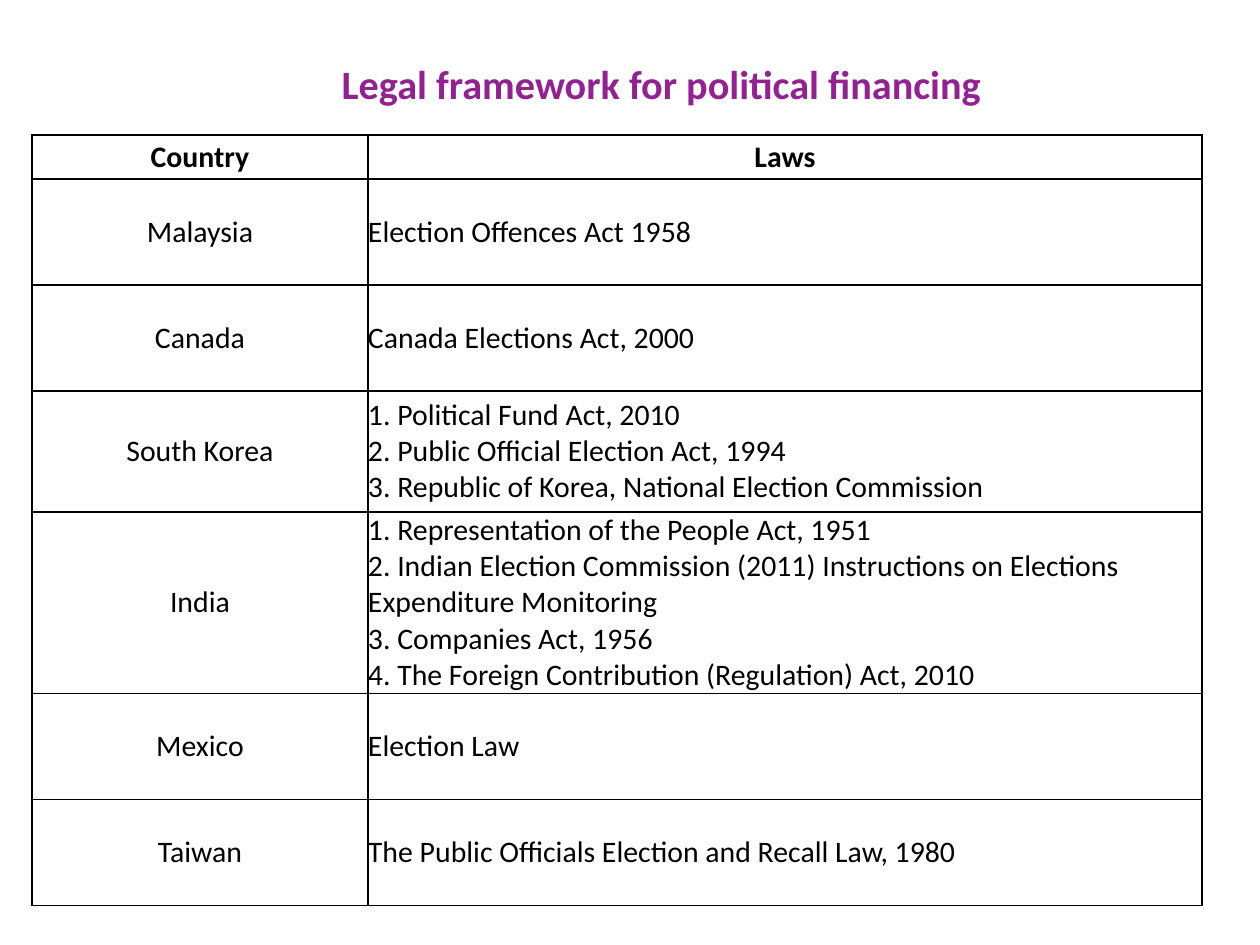
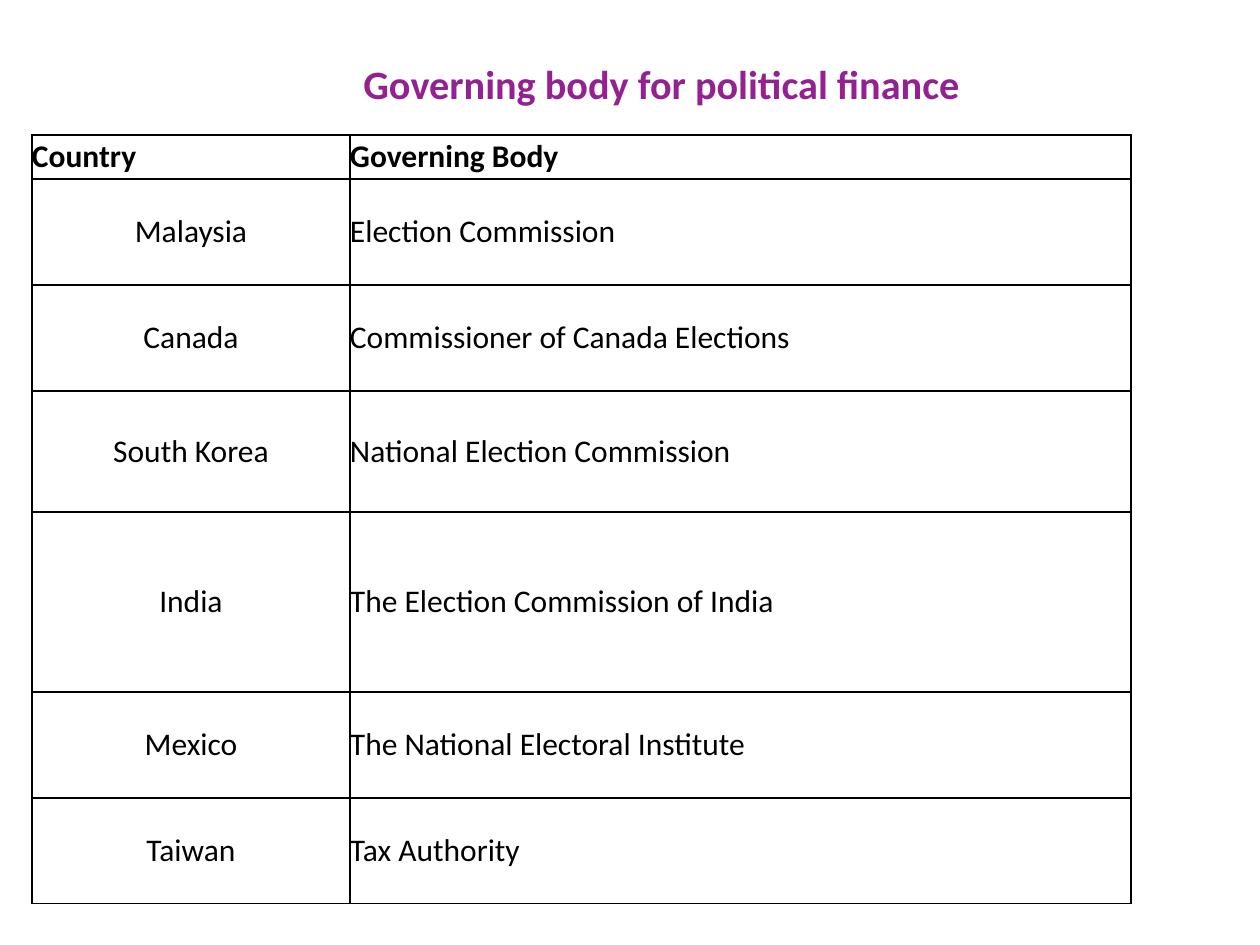
import copy

import pptx
import pptx.dml.color
import pptx.enum.text
import pptx.oxml
import pptx.oxml.ns
import pptx.util

PX = 914400 / 126
FONT = "Calibri"
PURPLE = pptx.dml.color.RGBColor(0x94, 0x21, 0x92)
BLACK = pptx.dml.color.RGBColor(0, 0, 0)
CENTER = pptx.enum.text.PP_ALIGN.CENTER
LEFT = pptx.enum.text.PP_ALIGN.LEFT
MIDDLE = pptx.enum.text.MSO_ANCHOR.MIDDLE

TITLE_ONLY_LAYOUT = 5
ROW_HEIGHTS = [44, 106, 106, 121, 180, 106, 106]
COUNTRIES = ["Malaysia", "Canada", "South Korea", "India", "Mexico", "Taiwan"]
LAWS = [
    "Election Offences Act 1958",
    "Canada Elections Act, 2000",
    "1. Political Fund Act, 2010\n"
    "2. Public Official Election Act, 1994\n"
    "3. Republic of Korea, National Election Commission",
    "1. Representation of the People Act, 1951\n"
    "2. Indian Election Commission (2011) Instructions on Elections Expenditure Monitoring\n"
    "3. Companies Act, 1956\n"
    "4. The Foreign Contribution (Regulation) Act, 2010",
    "Election Law",
    "The Public Officials Election and Recall Law, 1980",
]
GOVERNING_BODIES = [
    "Election Commission",
    "Commissioner of Canada Elections",
    "National Election Commission",
    "The Election Commission of India",
    "The National Electoral Institute",
    "Tax Authority",
]


def px(length):
    return pptx.util.Emu(round(length * PX))


def write_text(paragraph, text, size, color, bold, alignment):
    paragraph.text = text
    paragraph.alignment = alignment
    for run in paragraph.runs:
        run.font.name = FONT
        run.font.size = pptx.util.Pt(size)
        run.font.bold = bold
        run.font.color.rgb = color
    for line_break in paragraph._p.findall(pptx.oxml.ns.qn("a:br")):
        line_break.append(copy.deepcopy(paragraph.runs[0]._r.rPr))


def add_title(slide, text):
    title = slide.shapes.title
    title.left, title.top, title.width, title.height = map(px, (87, 52, 1087, 63))
    frame = title.text_frame
    frame.auto_size = pptx.enum.text.MSO_AUTO_SIZE.NONE
    frame.word_wrap = True
    frame.vertical_anchor = MIDDLE
    frame.margin_left = px(69)
    frame.margin_right = frame.margin_top = frame.margin_bottom = px(6)
    write_text(frame.paragraphs[0], text, 23, PURPLE, True, CENTER)


def add_borders(cell):
    properties = cell._tc.get_or_add_tcPr()
    for side in ("lnL", "lnR", "lnT", "lnB"):
        properties.append(pptx.oxml.parse_xml(
            f'<a:{side} {pptx.oxml.ns.nsdecls("a")} w="12700"><a:solidFill>'
            f'<a:srgbClr val="{BLACK}"/></a:solidFill></a:{side}>'
        ))


def fill_cell(cell, text, size, bold, alignment):
    cell.margin_left = cell.margin_right = cell.margin_top = cell.margin_bottom = 0
    cell.vertical_anchor = MIDDLE
    add_borders(cell)
    cell.fill.background()
    write_text(cell.text_frame.paragraphs[0], text, size, BLACK, bold, alignment)


def add_country_table(slide, headers, entries, column_widths, size, header_alignment):
    rows = [headers, *zip(COUNTRIES, entries)]
    table = slide.shapes.add_table(
        len(rows), len(headers), px(32), px(135),
        px(sum(column_widths)), px(sum(ROW_HEIGHTS)),
    ).table
    table.first_row = True
    table.horz_banding = False
    for column, width in zip(table.columns, column_widths):
        column.width = px(width)
    for row_index, values in enumerate(rows):
        table.rows[row_index].height = px(ROW_HEIGHTS[row_index])
        is_header = row_index == 0
        alignments = (header_alignment,) * 2 if is_header else (CENTER, LEFT)
        for column_index, (text, alignment) in enumerate(zip(values, alignments)):
            cell = table.cell(row_index, column_index)
            fill_cell(cell, text, size, is_header, alignment)


def add_slide(presentation, title, *table_content):
    slide = presentation.slides.add_slide(presentation.slide_layouts[TITLE_ONLY_LAYOUT])
    add_title(slide, title)
    add_country_table(slide, *table_content)


def main():
    presentation = pptx.Presentation()
    presentation.slide_width = px(1260)
    presentation.slide_height = px(945)
    add_slide(presentation, "Legal framework for political financing",
              ("Country", "Laws"), LAWS, (336, 834), 17, CENTER)
    add_slide(presentation, "Governing body for political finance",
              ("Country", "Governing Body"), GOVERNING_BODIES, (318, 781), 18, LEFT)
    presentation.save("out.pptx")


if __name__ == "__main__":
    main()
